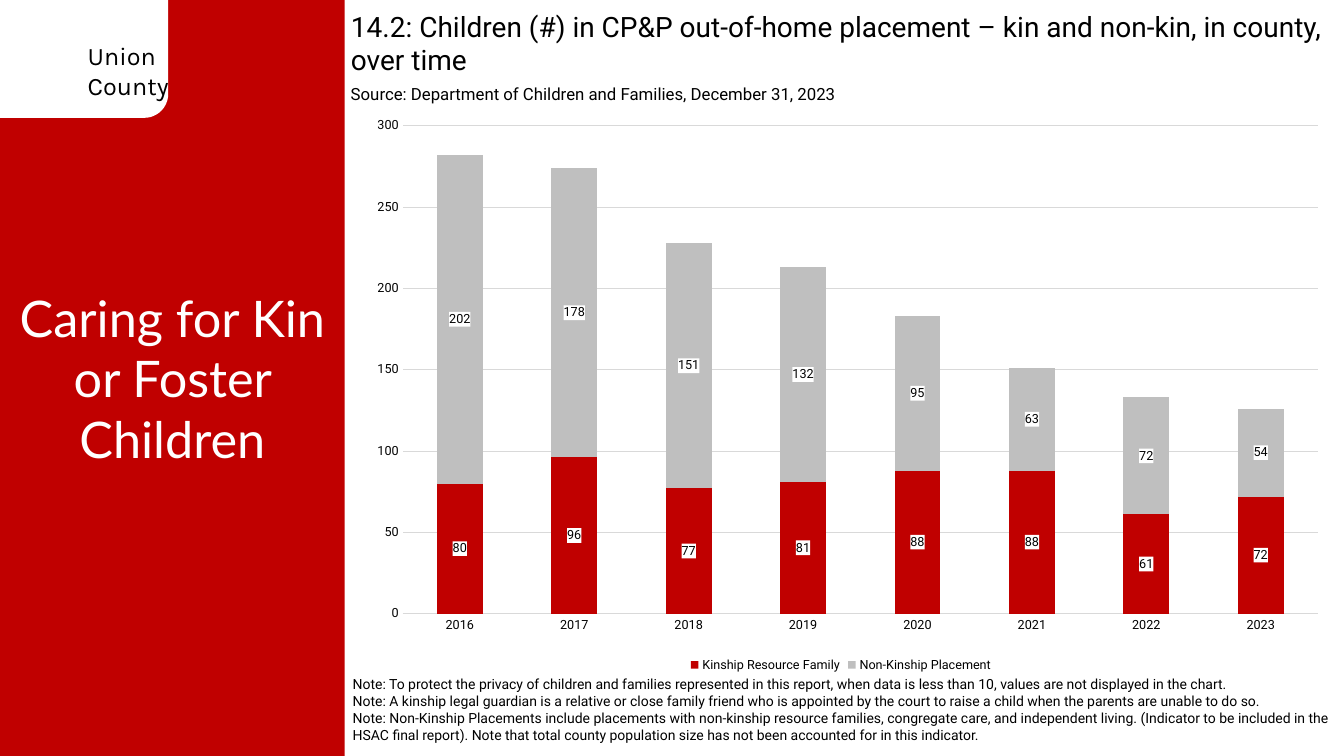
from lxml import etree
from pptx import Presentation
from pptx.chart.data import CategoryChartData
from pptx.dml.color import RGBColor
from pptx.enum.chart import XL_CHART_TYPE, XL_LEGEND_POSITION, XL_TICK_MARK
from pptx.enum.shapes import MSO_SHAPE
from pptx.enum.text import MSO_ANCHOR, PP_ALIGN
from pptx.oxml import parse_xml
from pptx.oxml.ns import nsdecls, qn
from pptx.util import Cm, Pt

COLORS = {
    "red": "C00000",
    "gray": "BFBFBF",
    "grid": "D9D9D9",
    "white": "FFFFFF",
    "black": "000000",
}


class SlideBuilder:
    body_font = "Roboto"

    def __init__(self, slide):
        self.slide = slide

    def color(self, name):
        return RGBColor.from_string(COLORS[name])

    def style_font(self, font, size, name=body_font, color="black"):
        font.size = Pt(size)
        font.name = name
        font.bold = False
        font.color.rgb = self.color(color)

    def panel(self, preset, box, fill):
        panel = self.slide.shapes.add_shape(preset, *map(Cm, box))
        panel.fill.solid()
        panel.fill.fore_color.rgb = self.color(fill)
        panel.line.fill.background()
        panel.shadow.inherit = False

    def set_text(self, holder, paragraphs, size, font=body_font, color="black",
                 align=PP_ALIGN.LEFT, anchor=MSO_ANCHOR.TOP):
        frame = holder.text_frame
        frame.word_wrap = True
        frame.vertical_anchor = anchor
        for index, wording in enumerate(paragraphs):
            paragraph = frame.add_paragraph() if index else frame.paragraphs[0]
            paragraph.text = wording
            paragraph.alignment = align
            self.style_font(paragraph.font, size, font, color)

    def title(self, box, wording, size):
        heading = self.slide.shapes.title
        heading.left, heading.top, heading.width, heading.height = map(Cm, box)
        self.set_text(heading, [wording], size)

    def text(self, box, paragraphs, size, **style):
        holder = self.slide.shapes.add_textbox(*map(Cm, box))
        self.set_text(holder, paragraphs, size, **style)

    def stacked_columns(self, box, years, series, plot_layout):
        data = CategoryChartData()
        data.categories = years
        for name, values, _ in series:
            data.add_series(name, values)
        chart = self.slide.shapes.add_chart(
            XL_CHART_TYPE.COLUMN_STACKED, *map(Cm, box), data).chart
        self.style_font(chart.font, 10, "Calibri")
        chart.has_title = False
        chart.has_legend = True
        chart.legend.position = XL_LEGEND_POSITION.BOTTOM
        chart.legend.include_in_layout = False
        self.style_font(chart.legend.font, 9)

        for axis in (chart.category_axis, chart.value_axis):
            axis.major_tick_mark = XL_TICK_MARK.NONE
            axis.minor_tick_mark = XL_TICK_MARK.NONE
            self.style_font(axis.tick_labels.font, 9)
        chart.value_axis.minimum_scale = 0
        chart.value_axis.maximum_scale = 300
        chart.value_axis.major_unit = 50
        chart.value_axis.has_major_gridlines = True
        chart.value_axis.format.line.fill.background()
        gridlines = chart.value_axis.major_gridlines
        for line in (chart.category_axis.format.line, gridlines.format.line):
            line.color.rgb = self.color("grid")
            line.width = Pt(0.75)

        plot = chart.plots[0]
        plot.gap_width = 150
        plot.overlap = 100
        plot.vary_by_categories = False
        for column, (_, _, fill) in zip(plot.series, series):
            column.format.fill.solid()
            column.format.fill.fore_color.rgb = self.color(fill)
            self.boxed_labels(column.data_labels)
        self.place_plot(chart, plot_layout)

    def boxed_labels(self, labels):
        labels.show_value = True
        self.style_font(labels.font, 9)
        text_properties = labels._element.find(qn("c:txPr"))
        text_properties.addprevious(parse_xml(
            f'<c:spPr {nsdecls("c", "a")}><a:solidFill>'
            f'<a:srgbClr val="{COLORS["white"]}"/></a:solidFill></c:spPr>'))

    def place_plot(self, chart, fractions):
        area = chart._chartSpace.find(f'.//{qn("c:plotArea")}')
        for layout in area.findall(qn("c:layout")):
            area.remove(layout)
        layout = etree.Element(qn("c:layout"))
        manual = etree.SubElement(layout, qn("c:manualLayout"))
        settings = [("layoutTarget", "inner"), ("xMode", "edge"), ("yMode", "edge")]
        settings += zip("xywh", fractions)
        for tag, value in settings:
            etree.SubElement(manual, qn(f"c:{tag}")).set("val", str(value))
        area.insert(0, layout)


def main():
    presentation = Presentation()
    presentation.slide_width = Cm(33.87)
    presentation.slide_height = Cm(19.05)
    builder = SlideBuilder(
        presentation.slides.add_slide(presentation.slide_layouts[5]))

    builder.panel(MSO_SHAPE.RECTANGLE, (0, 0, 8.69, 19.05), "red")
    builder.panel(MSO_SHAPE.ROUNDED_RECTANGLE, (-0.84, -0.64, 5.08, 3.61), "white")
    builder.text((1.96, 0.89, 2.54, 1.8), ["Union", "County"], 18, font="Karla")
    builder.title(
        (8.59, 0.1, 25.2, 2.64),
        "14.2: Children (#) in CP&P out-of-home placement – kin and non-kin, "
        "in county, over time", 20)
    builder.text(
        (8.59, 1.98, 17.91, 0.76),
        ["Source: Department of Children and Families, December 31, 2023"], 12)
    builder.text(
        (8.64, 16.71, 25.25, 2.34),
        ["Note: To protect the privacy of children and families represented in "
         "this report, when data is less than 10, values are not displayed in "
         "the chart.",
         "Note: A kinship legal guardian is a relative or close family friend who "
         "is appointed by the court to raise a child when the parents are unable "
         "to do so.\vNote: Non-Kinship Placements include placements with "
         "non-kinship resource families, congregate care, and independent living. "
         "(Indicator to be included in the HSAC final report). Note that total "
         "county population size has not been accounted for in this indicator."],
        10, anchor=MSO_ANCHOR.MIDDLE)
    builder.stacked_columns(
        (8.92, 2.74, 24.54, 14.3),
        [str(year) for year in range(2016, 2024)],
        [("Kinship Resource Family", (80, 96, 77, 81, 88, 88, 61, 72), "red"),
         ("Non-Kinship Placement", (202, 178, 151, 132, 95, 63, 72, 54), "gray")],
        (0.05, 0.03, 0.94, 0.86))
    builder.text(
        (0, 7.11, 8.69, 4.88), ["Caring for Kin or Foster Children"], 36,
        font="Lato", color="white", align=PP_ALIGN.CENTER)

    presentation.save("out.pptx")


if __name__ == "__main__":
    main()
